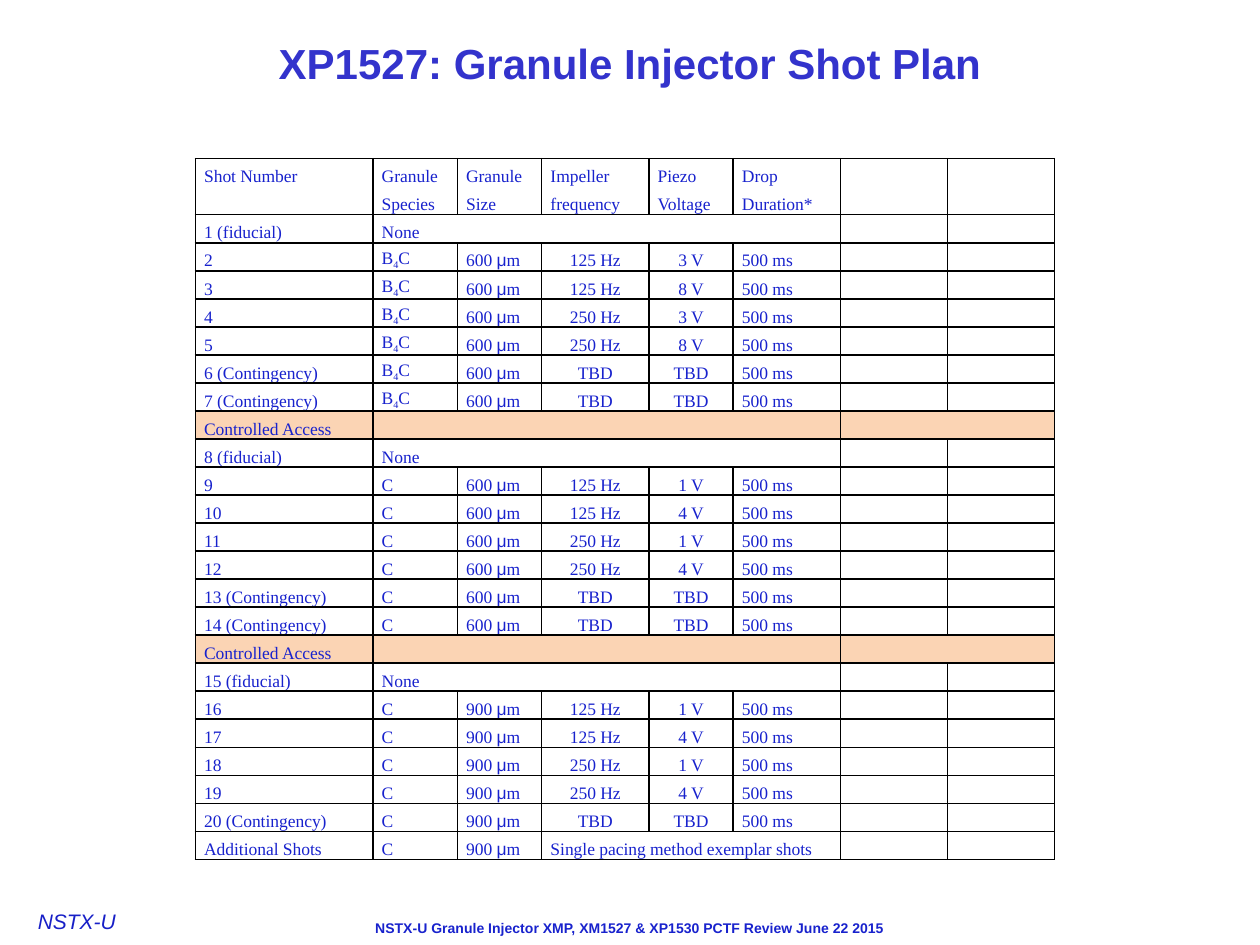
"""Builds the granule injector shot plan slide."""
from dataclasses import dataclass

from lxml import etree
from pptx import Presentation, util as u
from pptx.dml import color
from pptx.enum import text
from pptx.oxml import ns


@dataclass(frozen=True)
class Theme:
    title: str = "3333CC"
    ink: str = "1822CD"
    mark: str = "171FC7"
    access: str = "FBD4B4"
    border: str = "000000"
    sans: str = "Arial"
    serif: str = "Times New Roman"
    title_size: int = 24
    mark_size: int = 12
    table_size: int = 10
    footer_size: int = 8


theme = Theme()


def style(span, size, ink, face, bold=False, italic=False):
    font = span.font
    font.size, font.name, font.bold, font.italic = u.Pt(size), face, bold, italic
    font.color.rgb = color.RGBColor.from_string(ink)


def add_borders(cell):
    properties = cell._tc.get_or_add_tcPr()
    for side in ("a:lnL", "a:lnR", "a:lnT", "a:lnB"):
        line = etree.SubElement(properties, ns.qn(side), w=str(u.Pt(1)))
        fill = etree.SubElement(line, ns.qn("a:solidFill"))
        etree.SubElement(fill, ns.qn("a:srgbClr"), val=theme.border)


deck = Presentation()
deck.slide_width, deck.slide_height = u.Inches(10), u.Inches(7.5)
page = deck.slides.add_slide(deck.slide_layouts[5])

title = page.shapes.title
title.left, title.top, title.width, title.height = 0, 0, u.Inches(10), u.Inches(1)
title.text_frame.text = "XP1527: Granule Injector Shot Plan"
title.text_frame.auto_size = text.MSO_AUTO_SIZE.NONE
title.text_frame.vertical_anchor = text.MSO_ANCHOR.MIDDLE
title.text_frame.paragraphs[0].alignment = text.PP_ALIGN.CENTER
style(title.text_frame.paragraphs[0].runs[0], theme.title_size, theme.title, theme.sans, bold=True)

mark = page.shapes.add_textbox(u.Inches(0.3), u.Inches(7.21), u.Inches(1.12), u.Inches(0.21))
frame = mark.text_frame
frame.word_wrap = True
frame.margin_left = frame.margin_top = frame.margin_right = frame.margin_bottom = 0
frame.text = "NSTX-U"
style(frame.paragraphs[0].runs[0], theme.mark_size, theme.mark, theme.sans, italic=True)

footer = page.shapes.add_textbox(u.Inches(2), u.Inches(7.25), u.Inches(6), u.Inches(0.24))
footer.text_frame.word_wrap = True
footer.text_frame.text = "NSTX-U Granule Injector XMP, XM1527 & XP1530 PCTF Review June 22 2015"
footer.text_frame.paragraphs[0].alignment = text.PP_ALIGN.CENTER
style(footer.text_frame.paragraphs[0].runs[0], theme.footer_size, theme.ink, theme.sans, bold=True)

series = [
    ("B4C", "600 μm", ("3 V", "8 V"), 2),
    ("C", "600 μm", ("1 V", "4 V"), 2),
    ("C", "900 μm", ("1 V", "4 V"), 1),
]
rows = [["Shot Number", "Granule Species", "Granule Size", "Impeller frequency",
         "Piezo Voltage", "Drop Duration*"]]
shot = 1
for species, size, voltages, spares in series:
    if shot > 1:
        rows.append(["Controlled Access"])
    rows.append([f"{shot} (fiducial)", "None"])
    settings = [("", rate, volts) for rate in ("125 Hz", "250 Hz") for volts in voltages]
    settings += [(" (Contingency)", "TBD", "TBD")] * spares
    for shot, (note, rate, volts) in enumerate(settings, shot + 1):
        rows.append([f"{shot}{note}", species, size, rate, volts, "500 ms"])
    shot += 1
rows.append(["Additional Shots", "C", "900 μm", "Single pacing method exemplar shots"])

widths = [1.41, 0.67, 0.67, 0.85, 0.67, 0.85, 0.85, 0.85]
height = u.Inches(5.56)
table = page.shapes.add_table(len(rows), len(widths), u.Inches(1.55), u.Inches(1.26),
                              u.Inches(sum(widths)), height).table
table.first_row = table.horz_banding = False
for column, width in zip(table.columns, widths):
    column.width = u.Inches(width)
for index, row in enumerate(table.rows):
    row.height = height // (len(rows) + 1) * (2 if index == 0 else 1)

for r, values in enumerate(rows):
    is_access = values[0] == "Controlled Access"
    for c in range(len(widths)):
        cell = table.cell(r, c)
        add_borders(cell)
        cell.margin_left = cell.margin_right = u.Inches(0.07)
        cell.margin_top = cell.margin_bottom = 0
        if is_access:
            cell.fill.solid()
            cell.fill.fore_color.rgb = color.RGBColor.from_string(theme.access)
        else:
            cell.fill.background()
        para = cell.text_frame.paragraphs[0]
        para.line_spacing = u.Pt(16)
        if r > 0 and c in (3, 4) and len(values) == 6:
            para.alignment = text.PP_ALIGN.CENTER
        value = values[c] if c < len(values) else ""
        for piece in filter(None, value.partition("4" if value == "B4C" else "μ")):
            span = para.add_run()
            span.text = piece
            style(span, theme.table_size, theme.ink, theme.sans if piece == "μ" else theme.serif)
            if value == "B4C" and piece == "4":
                span._r.get_or_add_rPr().set("baseline", "-25000")
        if not value:
            etree.SubElement(para._p, ns.qn("a:endParaRPr"), sz=str(theme.table_size * 100))
    if len(values) < 6:
        table.cell(r, max(len(values) - 1, 1)).merge(table.cell(r, 5))
    if is_access:
        table.cell(r, 6).merge(table.cell(r, 7))

deck.save("out.pptx")
